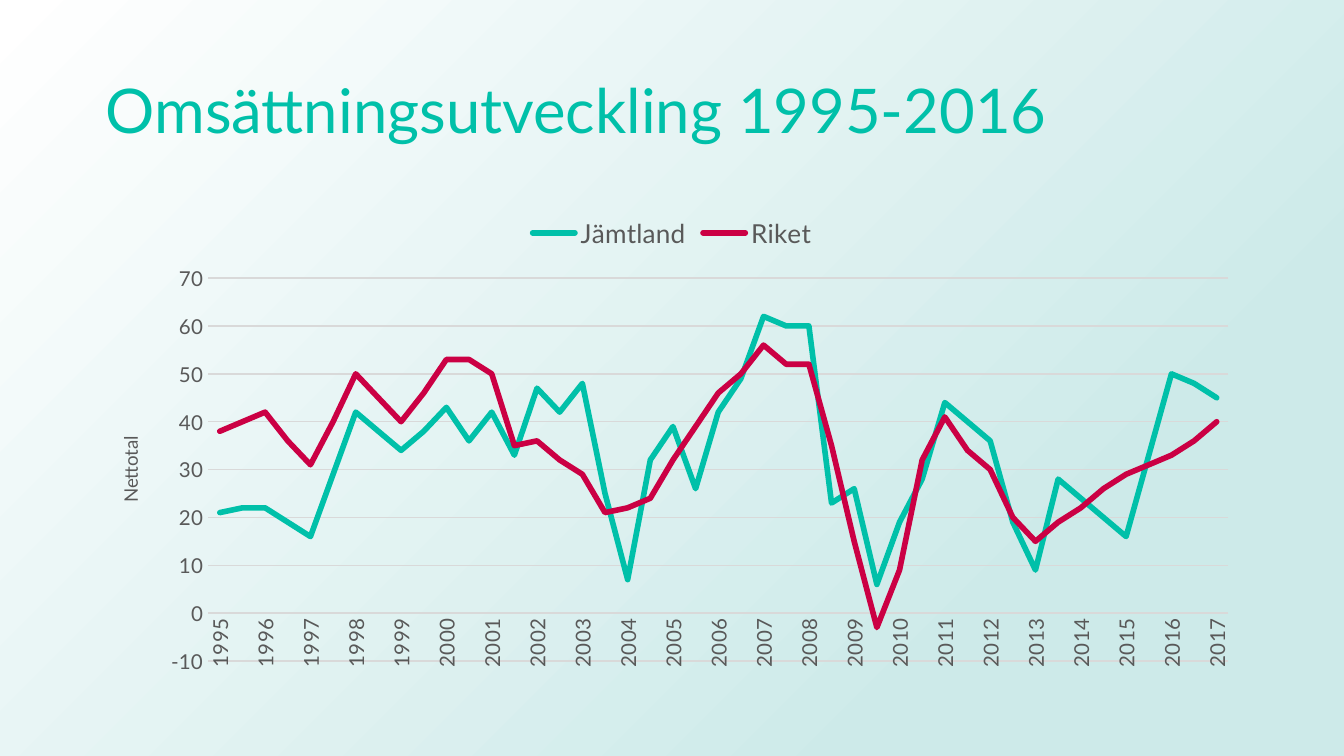
import dataclasses
import typing

import pptx
import pptx.chart.data
import pptx.dml.color
import pptx.enum.chart
import pptx.enum.shapes
import pptx.enum.text
import pptx.oxml
import pptx.oxml.ns
import pptx.util

Cm = pptx.util.Cm
Pt = pptx.util.Pt
RGB = pptx.dml.color.RGBColor
TEAL = RGB(0x00, 0xC0, 0xA9)
RED = RGB(0xCB, 0x00, 0x44)
GREY = RGB(0x59, 0x59, 0x59)
PALE = RGB(0xD9, 0xD9, 0xD9)
MINT = RGB(0xCD, 0xEA, 0xE9)
WHITE = RGB(0xFF, 0xFF, 0xFF)
WIDE, HIGH = Cm(25.4), Cm(14.29)


@dataclasses.dataclass
class Trend:
    name: str
    color: RGB
    vals: list[int]


TRENDS = [
    Trend("Jämtland", TEAL, [
        21, 22, 22, 19, 16, 29, 42, 38, 34, 38, 43, 36, 42, 33, 47,
        42, 48, 25, 7, 32, 39, 26, 42, 49, 62, 60, 60, 23, 26, 6,
        19, 28, 44, 40, 36, 19, 9, 28, 24, 20, 16, 33, 50, 48, 45]),
    Trend("Riket", RED, [
        38, 40, 42, 36, 31, 40, 50, 45, 40, 46, 53, 53, 50, 35, 36,
        32, 29, 21, 22, 24, 32, 39, 46, 50, 56, 52, 52, 35, 15, -3,
        9, 32, 41, 34, 30, 20, 15, 19, 22, 26, 29, 31, 33, 36, 40]),
]


def apply(item: typing.Any, values: dict[str, typing.Any]) -> None:
    for key, value in values.items():
        setattr(item, key, value)


def style(font: typing.Any, size: int, color: RGB = GREY) -> None:
    apply(font, {"name": "Lato", "size": Pt(size), "bold": False})
    font.color.rgb = color


def rule(line: typing.Any, color: RGB, width: float) -> None:
    line.color.rgb = color
    line.width = Pt(width)


def node(tag: str, body: str = "", attrs: str = "") -> typing.Any:
    names = pptx.oxml.ns.nsdecls("a", "c")
    return pptx.oxml.parse_xml(f"<{tag} {names} {attrs}>{body}</{tag}>")


def draw_back(slide: typing.Any) -> None:
    kind = pptx.enum.shapes.MSO_SHAPE.RECTANGLE
    back = slide.shapes.add_shape(kind, 0, 0, WIDE, HIGH)
    back.shadow.inherit = False
    back.line.fill.background()
    back.fill.gradient()
    for stop, place, color in zip(back.fill.gradient_stops, (0.23, 1), (MINT, WHITE)):
        stop.position = place
        stop.color.rgb = color
    focus = '<a:fillToRect l="100000" t="100000"/>'
    for lin in back.element.xpath(".//a:gradFill/a:lin"):
        lin.addnext(node("a:tileRect", attrs='r="-100000" b="-100000"'))
        lin.getparent().replace(lin, node("a:path", focus, 'path="circle"'))


def draw_title(slide: typing.Any, text: str) -> None:
    box = slide.shapes.add_textbox(Cm(1.75), Cm(0.76), Cm(21.9), Cm(2.76))
    apply(box.text_frame, {
        "word_wrap": True,
        "vertical_anchor": pptx.enum.text.MSO_ANCHOR.MIDDLE,
    })
    para = box.text_frame.paragraphs[0]
    para.line_spacing = 0.9
    run = para.add_run()
    run.text = text
    style(run.font, 33, TEAL)


def set_axes(chart: typing.Any) -> None:
    none = pptx.enum.chart.XL_TICK_MARK.NONE
    years, total = chart.category_axis, chart.value_axis
    for axis in (years, total):
        apply(axis, {"major_tick_mark": none, "minor_tick_mark": none})
        style(axis.tick_labels.font, 11)
    rule(years.format.line, PALE, 0.75)
    for last in chart.element.xpath(".//c:catAx/c:noMultiLvlLbl"):
        last.addprevious(node("c:tickLblSkip", attrs='val="2"'))

    apply(total, {"minimum_scale": -10, "maximum_scale": 70, "major_unit": 10,
                  "has_major_gridlines": True, "has_title": True})
    apply(total.tick_labels, {"number_format": "0", "number_format_is_linked": False})
    total.format.line.fill.background()
    rule(total.major_gridlines.format.line, PALE, 0.75)
    frame = total.axis_title.text_frame
    frame.text = "Nettotal"
    style(frame.paragraphs[0].runs[0].font, 10)
    turned = ".//c:catAx/c:txPr/a:bodyPr | .//c:valAx/c:title//a:bodyPr"
    for body in chart.element.xpath(turned):
        body.set("rot", "-5400000")
        body.set("vert", "horz")


def set_plot(chart: typing.Any) -> None:
    area = chart.element.xpath(".//c:plotArea")[0]
    for old in area.xpath("c:layout"):
        area.remove(old)
    marks = {"layoutTarget": "inner", "xMode": "edge", "yMode": "edge",
             "x": 0.1, "y": 0.16, "w": 0.88, "h": 0.8}
    body = "".join(f'<c:{key} val="{val}"/>' for key, val in marks.items())
    area.insert(0, node("c:layout", f"<c:manualLayout>{body}</c:manualLayout>"))


def draw_chart(slide: typing.Any, trends: list[Trend]) -> None:
    data = pptx.chart.data.CategoryChartData(number_format="0")
    data.categories = [str(1995 + half // 2) for half in range(45)]
    for trend in trends:
        data.add_series(trend.name, trend.vals)
    chart = slide.shapes.add_chart(
        pptx.enum.chart.XL_CHART_TYPE.LINE,
        Cm(1.75), Cm(3.81), Cm(21.9), Cm(9.05), data).chart
    apply(chart, {"has_title": False, "has_legend": True})
    style(chart.font, 10)
    apply(chart.legend, {
        "position": pptx.enum.chart.XL_LEGEND_POSITION.TOP,
        "include_in_layout": False,
    })
    style(chart.legend.font, 14)
    chart.plots[0].vary_by_categories = False
    for line, trend in zip(chart.plots[0].series, trends):
        line.smooth = False
        rule(line.format.line, trend.color, 3)
    for edge in chart.element.xpath(".//c:ser/c:spPr/a:ln"):
        edge.set("cap", "rnd")
        edge.append(node("a:round"))
    set_axes(chart)
    set_plot(chart)


def main() -> None:
    deck = pptx.Presentation()
    apply(deck, {"slide_width": WIDE, "slide_height": HIGH})
    slide = deck.slides.add_slide(deck.slide_layouts[6])
    draw_back(slide)
    draw_title(slide, "Omsättningsutveckling 1995-2016")
    draw_chart(slide, TRENDS)
    deck.save("out.pptx")


if __name__ == "__main__":
    main()
